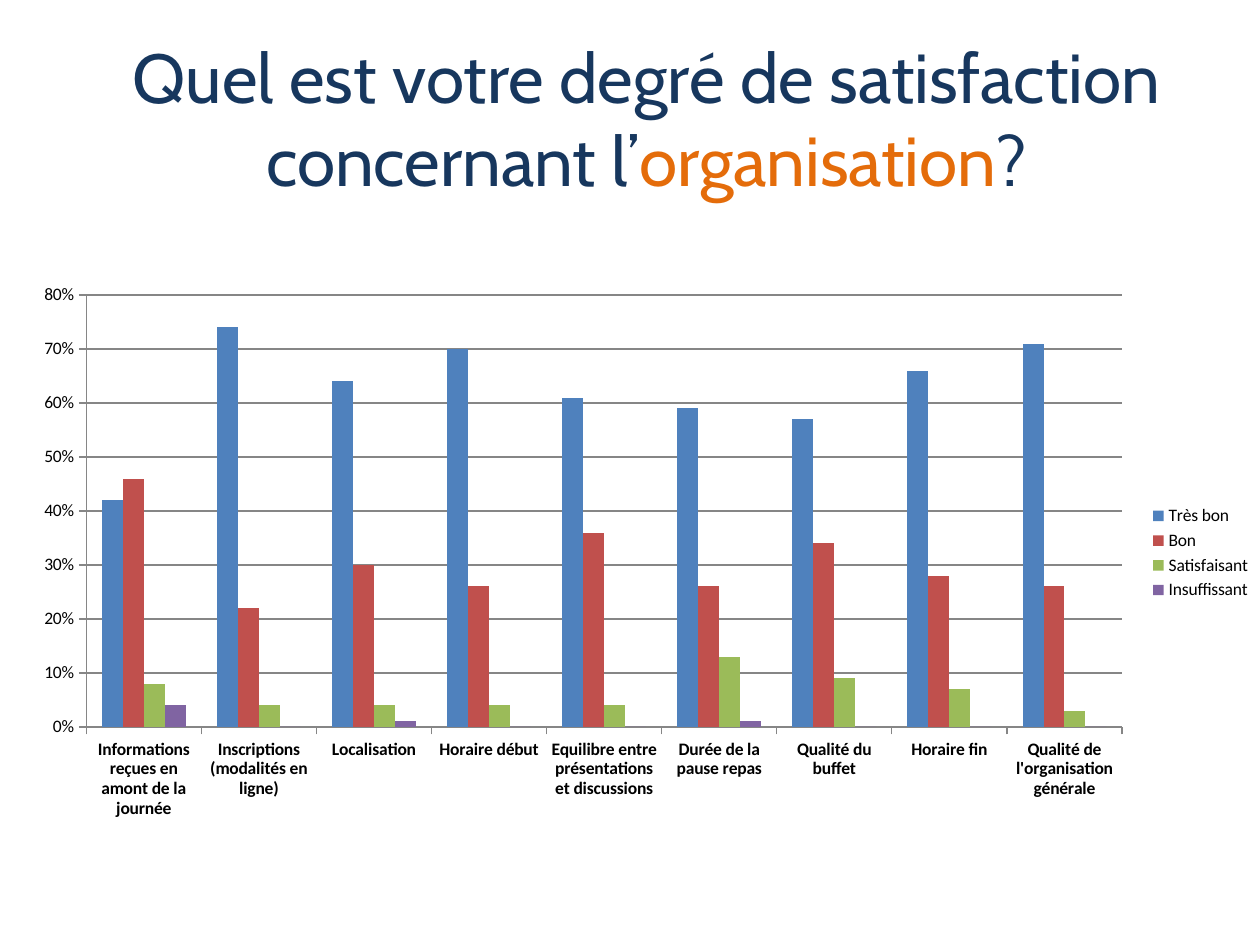
from lxml.etree import SubElement
from pptx import Presentation
from pptx.chart.data import CategoryChartData
from pptx.dml.color import RGBColor
from pptx.enum.chart import XL_CHART_TYPE, XL_LEGEND_POSITION, XL_TICK_MARK
from pptx.enum.text import MSO_ANCHOR, PP_ALIGN
from pptx.oxml.ns import qn
from pptx.util import Emu, Pt

COLORS = {
    "navy": "17375E", "orange": "E46C0A", "black": "000000", "gray": "868686",
    "Très bon": "4F81BD", "Bon": "C0504D",
    "Satisfaisant": "9BBB59", "Insuffissant": "8064A2",
}


def px(n):
    return Emu(round(n * 914400 / 126))


def rgb(name):
    return RGBColor.from_string(COLORS[name])


deck = Presentation()
deck.slide_width, deck.slide_height = px(1260), px(945)
slide = deck.slides.add_slide(deck.slide_layouts[5])

# Title with one highlighted word
title = slide.shapes.title
title.left, title.top, title.width, title.height = map(px, (48, 38, 1197, 158))
frame = title.text_frame
frame.word_wrap = True
frame.vertical_anchor = MSO_ANCHOR.MIDDLE
para = frame.paragraphs[0]
para.alignment = PP_ALIGN.CENTER
for text, color in (
    ("Quel est votre degré de satisfaction concernant l’", "navy"),
    ("organisation", "orange"),
    ("?", "navy"),
):
    run = para.add_run()
    run.text = text
    run.font.name = "Cabin"
    run.font.size = Pt(39.6)
    run.font.color.rgb = rgb(color)

# Survey results
data = CategoryChartData(number_format="0%")
data.categories = [
    "Informations reçues en amont de la journée",
    "Inscriptions (modalités en ligne)",
    "Localisation",
    "Horaire début",
    "Equilibre entre présentations et discussions",
    "Durée de la pause repas",
    "Qualité du buffet",
    "Horaire fin",
    "Qualité de l'organisation générale",
]
for name, shares in (
    ("Très bon", (0.42, 0.74, 0.64, 0.7, 0.61, 0.59, 0.57, 0.66, 0.71)),
    ("Bon", (0.46, 0.22, 0.3, 0.26, 0.36, 0.26, 0.34, 0.28, 0.26)),
    ("Satisfaisant", (0.08, 0.04, 0.04, 0.04, 0.04, 0.13, 0.09, 0.07, 0.03)),
    ("Insuffissant", (0.04, 0, 0.01, 0, 0, 0.01, 0, 0, 0)),
):
    data.add_series(name, shares)

chart = slide.shapes.add_chart(
    XL_CHART_TYPE.COLUMN_CLUSTERED, px(19), px(275), px(1245), px(556), data
).chart
chart.has_title = False
chart.font.name = "Calibri"
chart.font.size = Pt(10)
chart.font.color.rgb = rgb("black")

# Columns
plot = chart.plots[0]
plot.gap_width = 150
plot.overlap = 0
plot.vary_by_categories = False
for series in plot.series:
    series.format.fill.solid()
    series.format.fill.fore_color.rgb = rgb(series.name)

# Axes and gridlines
cat, val = chart.category_axis, chart.value_axis
val.minimum_scale, val.maximum_scale, val.major_unit = 0, 0.8, 0.1
val.tick_labels.number_format = "0%"
val.tick_labels.number_format_is_linked = False
val.has_major_gridlines = True
cat.tick_labels.font.bold = True
cat.tick_labels.font.name = "Calibri"
for axis in (cat, val):
    axis.major_tick_mark = XL_TICK_MARK.OUTSIDE
for part in (cat, val, val.major_gridlines):
    part.format.line.color.rgb = rgb("gray")
    part.format.line.width = Pt(0.75)

# Legend
chart.has_legend = True
chart.legend.position = XL_LEGEND_POSITION.RIGHT
chart.legend.include_in_layout = False

# Fixed plot area, as shares of the chart
area = plot._element.getparent()
layout = area.find(qn("c:layout"))
if layout is None:
    layout = SubElement(area, qn("c:layout"))
    area.insert(0, layout)
manual = SubElement(layout, qn("c:manualLayout"))
for tag, value in (
    ("layoutTarget", "inner"), ("xMode", "edge"), ("yMode", "edge"),
    ("x", "0.054"), ("y", "0.036"), ("w", "0.832"), ("h", "0.777"),
):
    SubElement(manual, qn("c:" + tag)).set("val", value)

deck.save("out.pptx")
